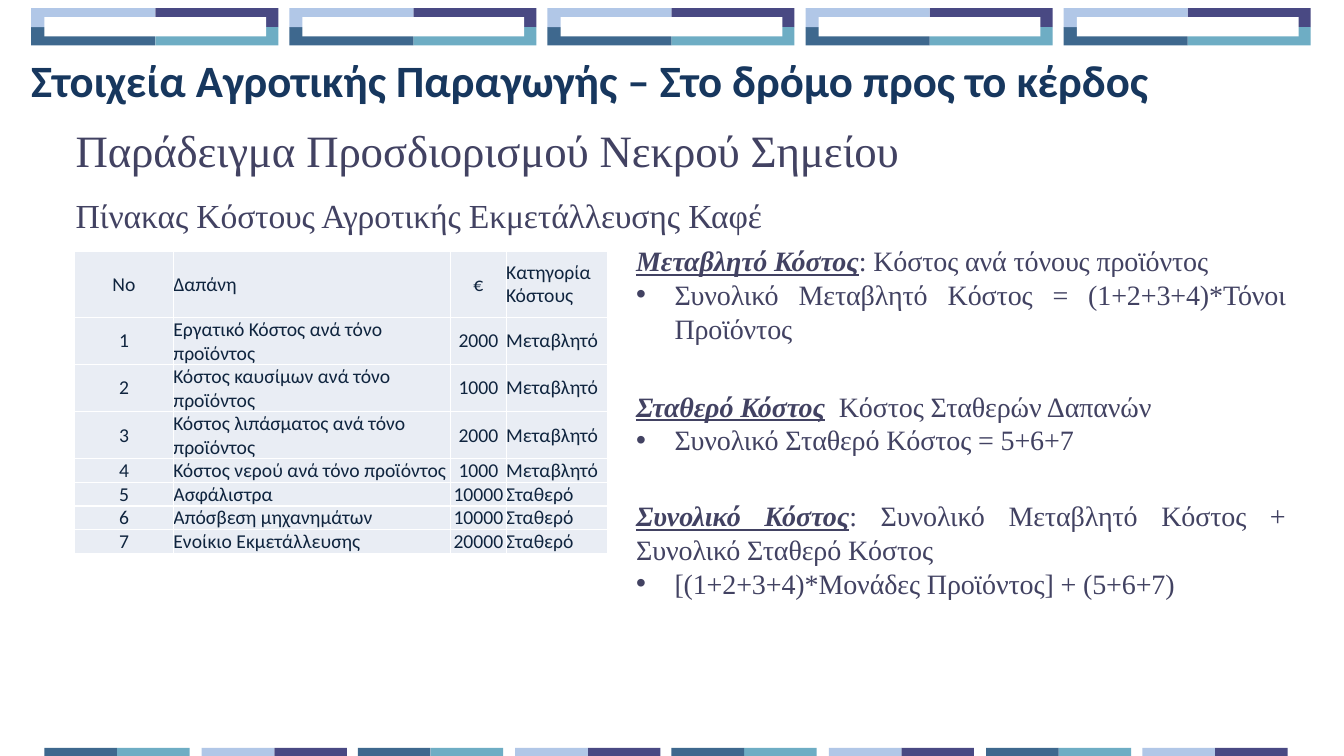
from lxml import etree
from pptx import Presentation
from pptx.dml.color import RGBColor
from pptx.enum.shapes import MSO_SHAPE
from pptx.enum.text import MSO_ANCHOR, MSO_AUTO_SIZE, PP_ALIGN
from pptx.oxml.ns import qn
from pptx.util import Pt

PX = 9144
RECTANGLE = MSO_SHAPE.RECTANGLE
TOP, MIDDLE = MSO_ANCHOR.TOP, MSO_ANCHOR.MIDDLE
NO_AUTOFIT = MSO_AUTO_SIZE.NONE
LEFT, CENTER, JUSTIFY = PP_ALIGN.LEFT, PP_ALIGN.CENTER, PP_ALIGN.JUSTIFY
LILAC, PURPLE, BLUE, TEAL, WHITE = "B1C7E7", "494983", "3E688E", "6EADC4", "FFFFFF"
NAVY, INK, CELL_TEXT, CELL_FILL = "17375E", "424262", "0F243E", "E9EDF4"
SERIF, SANS = "Times New Roman", "Calibri"


def paint(fill, color):
    fill.solid()
    fill.fore_color.rgb = RGBColor.from_string(color)


def write(paragraph, text, size=20, font=SERIF, color=INK, bold=False,
          emphasis=False, align=LEFT, spacing=None):
    paragraph.alignment = align
    run = paragraph.add_run()
    run.text = text
    run.font.size = Pt(size)
    run.font.name = font
    run.font.bold = bold or emphasis
    run.font.italic = emphasis
    run.font.underline = emphasis
    paint(run.font.fill, color)
    if spacing is not None:
        run.font._element.set("spc", str(spacing))


presentation = Presentation()
presentation.slide_width = 1333 * PX
presentation.slide_height = 750 * PX
slide = presentation.slides.add_slide(presentation.slide_layouts[5])

bars = []
for index in range(5):
    x = 31 + 256 * index
    bars += [
        (x + 123, 8, 122, 19, PURPLE),
        (x + 123, 27, 122, 18, TEAL),
        (x, 27, 123, 18, BLUE),
        (x, 8, 123, 19, LILAC),
        (x + 13, 17, 220, 19, WHITE),
    ]
for index in range(8):
    x = 44 + round(155.6 * index)
    first, second = ((BLUE, TEAL), (LILAC, PURPLE))[index % 2]
    bars += [(x + 72, 742, 72, 8, second), (x, 742, 72, 8, first)]
for x, y, width, height, color in bars:
    bar = slide.shapes.add_shape(RECTANGLE, x * PX, y * PX, width * PX, height * PX)
    bar.shadow.inherit = False
    bar.line.fill.background()
    paint(bar.fill, color)

title = slide.shapes.title
title.left, title.top, title.width, title.height = 21 * PX, 47 * PX, 1229 * PX, 64 * PX
title.text_frame.auto_size = NO_AUTOFIT
title.text_frame.vertical_anchor = TOP
title.text_frame.word_wrap = True
write(title.text_frame.paragraphs[0],
      "Στοιχεία Αγροτικής Παραγωγής – Στο δρόμο προς το κέρδος",
      size=32, font=SANS, color=NAVY, bold=True)

headings = [
    (95, 71, 32, "Παράδειγμα Προσδιορισμού Νεκρού Σημείου"),
    (173, 61, 24, "Πίνακας Κόστους Αγροτικής Εκμετάλλευσης Καφέ"),
]
for y, height, size, text in headings:
    heading = slide.shapes.add_textbox(74 * PX, y * PX, 1124 * PX, height * PX)
    frame = heading.text_frame
    frame.word_wrap = True
    frame.margin_left = frame.margin_right = frame.margin_top = frame.margin_bottom = 0
    paragraph = frame.paragraphs[0]
    paragraph.line_spacing = 1.5
    paragraph._p.get_or_add_pPr().set("marL", str(1 * PX))
    write(paragraph, text, size=size, spacing=-10)

cost_rows = [
    ("Νο", "Δαπάνη", "€", "Κατηγορία Κόστους"),
    ("1", "Εργατικό Κόστος ανά τόνο προϊόντος", "2000", "Μεταβλητό"),
    ("2", "Κόστος καυσίμων ανά τόνο προϊόντος", "1000", "Μεταβλητό"),
    ("3", "Κόστος λιπάσματος ανά τόνο προϊόντος", "2000", "Μεταβλητό"),
    ("4", "Κόστος νερού ανά τόνο προϊόντος", "1000", "Μεταβλητό"),
    ("5", "Ασφάλιστρα", "10000", "Σταθερό"),
    ("6", "Απόσβεση μηχανημάτων", "10000", "Σταθερό"),
    ("7", "Ενοίκιο Εκμετάλλευσης", "20000", "Σταθερό"),
]
column_widths = (98, 275, 55, 101)
table = slide.shapes.add_table(len(cost_rows), len(column_widths),
                               74 * PX, 249 * PX, 529 * PX, 220 * PX).table
table.first_row = table.horz_banding = False
for column, width in zip(table.columns, column_widths):
    column.width = width * PX
for row_index, values in enumerate(cost_rows):
    table.rows[row_index].height = (22 if row_index else 66) * PX
    for column_index, value in enumerate(values):
        cell = table.cell(row_index, column_index)
        cell.margin_left = cell.margin_right = cell.margin_top = cell.margin_bottom = 0
        cell.vertical_anchor = MIDDLE
        properties = cell._tc.get_or_add_tcPr()
        for side in ("a:lnL", "a:lnR", "a:lnT", "a:lnB"):
            border = etree.SubElement(properties, qn(side), w="12700")
            border_fill = etree.SubElement(border, qn("a:solidFill"))
            etree.SubElement(border_fill, qn("a:srgbClr"), val=WHITE)
        paint(cell.fill, CELL_FILL)
        write(cell.text_frame.paragraphs[0], value, size=14, font=SANS, color=CELL_TEXT,
              align=LEFT if column_index % 2 else CENTER)

cost_notes = [
    (242, 101, "Μεταβλητό Κόστος", ": Κόστος ανά τόνους προϊόντος",
     "Συνολικό Μεταβλητό Κόστος = (1+2+3+4)*Τόνοι Προϊόντος"),
    (386, 67, "Σταθερό Κόστος", "  Κόστος Σταθερών Δαπανών",
     "Συνολικό Σταθερό Κόστος = 5+6+7"),
    (495, 101, "Συνολικό Κόστος", ": Συνολικό Μεταβλητό Κόστος + Συνολικό Σταθερό Κόστος",
     "[(1+2+3+4)*Μονάδες Προϊόντος] + (5+6+7)"),
]
for y, height, term, meaning, formula in cost_notes:
    note = slide.shapes.add_textbox(622 * PX, y * PX, 653 * PX, height * PX)
    frame = note.text_frame
    frame.word_wrap = True
    frame.margin_left = frame.margin_right = frame.margin_top = frame.margin_bottom = 0
    definition = frame.paragraphs[0]
    definition._p.get_or_add_pPr().set("marL", str(9 * PX))
    write(definition, term, emphasis=True, align=JUSTIFY, spacing=-10)
    write(definition, meaning, align=JUSTIFY, spacing=-10)
    bullet = frame.add_paragraph()
    properties = bullet._p.get_or_add_pPr()
    properties.set("marL", str(47 * PX))
    properties.set("indent", str(-38 * PX))
    etree.SubElement(properties, qn("a:buFont"), typeface="Arial")
    etree.SubElement(properties, qn("a:buChar"), char="•")
    write(bullet, formula, align=JUSTIFY, spacing=-10)

presentation.save("out.pptx")
